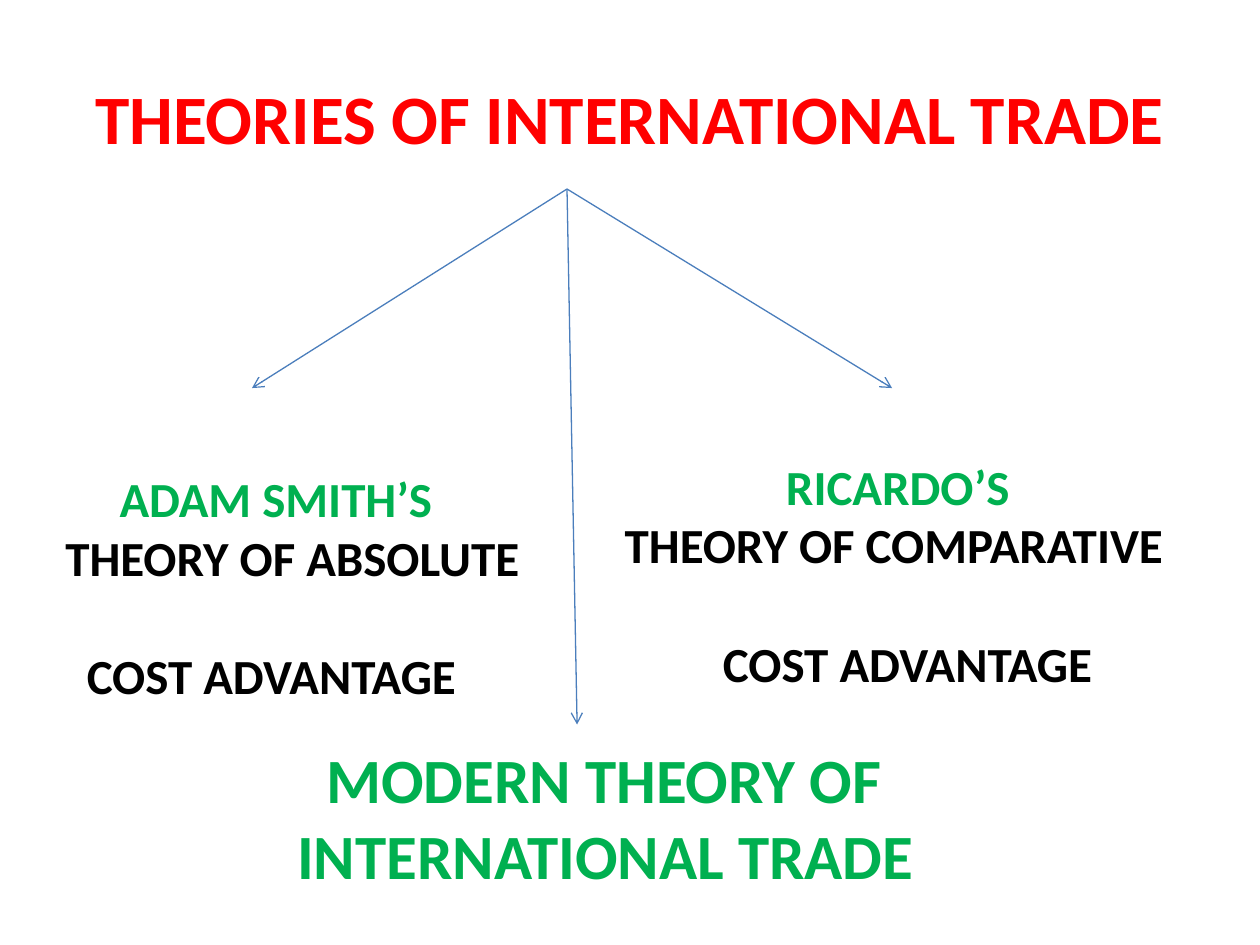
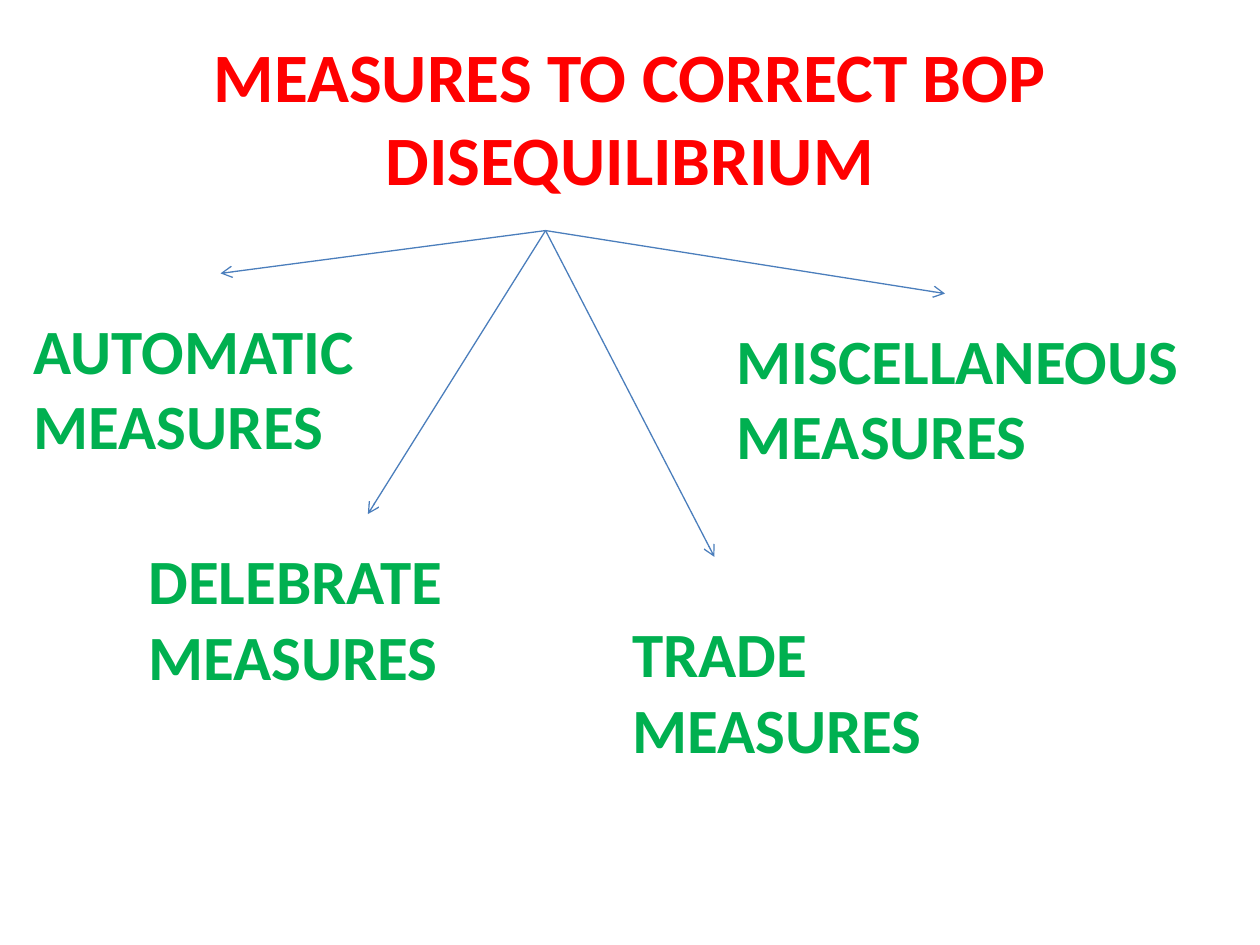
"""Build two slides: theories of international trade and measures to correct BOP disequilibrium."""
from pptx import Presentation
from pptx.dml.color import RGBColor
from pptx.enum.shapes import MSO_CONNECTOR
from pptx.enum.text import MSO_ANCHOR, MSO_AUTO_SIZE, PP_ALIGN
from pptx.oxml.ns import qn
from pptx.util import Inches, Pt
from lxml.etree import SubElement

RED = RGBColor(0xFF, 0x00, 0x00)
GREEN = RGBColor(0x00, 0xB0, 0x50)
BLACK = RGBColor(0x00, 0x00, 0x00)
BLUE = RGBColor(0x4B, 0x7E, 0xBC)
FONT = "Calibri"
TITLE_BOX = (0.5, 0.3, 9, 1.25)
COST_GAP = 34

# Each line of a label: text, colour, indent in inches, space before in points.
SLIDES = [
    {
        "title": "THEORIES OF INTERNATIONAL TRADE",
        "origin": (4.5, 1.5),
        "tips": [(2, 3.08), (7.08, 3.08), (4.58, 5.75)],
        "labels": [
            ((0.42, 3.67, 3.92, 1.51), 28, [
                ("ADAM SMITH’S", GREEN, 0.43, 0),
                ("THEORY OF ABSOLUTE", BLACK, 0, 0),
                ("COST ADVANTAGE", BLACK, 0.17, COST_GAP)]),
            ((4.33, 3.57, 5.67, 1.51), 28, [
                ("RICARDO’S", GREEN, 1.81, 0),
                ("THEORY OF COMPARATIVE", BLACK, 0.53, 0),
                ("COST ADVANTAGE", BLACK, 1.31, COST_GAP)]),
            ((1.92, 5.83, 6.67, 1.31), 36, [
                ("MODERN THEORY OF", GREEN, 0.57, 0),
                ("INTERNATIONAL TRADE", GREEN, 0.34, 0)]),
        ],
    },
    {
        "title": "MEASURES TO CORRECT BOP DISEQUILIBRIUM",
        "origin": (4.33, 1.83),
        "tips": [(1.75, 2.17), (7.5, 2.33), (2.92, 4.08), (5.67, 4.42)],
        "labels": [
            ((0.17, 2.42, 3.92, 1.31), 36, [("AUTOMATIC MEASURES", GREEN, 0, 0)]),
            ((1.08, 4.25, 4, 1.31), 36, [("DELEBRATE MEASURES", GREEN, 0, 0)]),
            ((4.92, 4.83, 2.83, 1.31), 36, [("TRADE MEASURES", GREEN, 0, 0)]),
            ((5.75, 2.5, 4.25, 1.31), 36, [("MISCELLANEOUS MEASURES", GREEN, 0, 0)]),
        ],
    },
]


def add_text(s, lines, box, size, align=PP_ALIGN.LEFT, anchor=MSO_ANCHOR.TOP,
             fit=MSO_AUTO_SIZE.SHAPE_TO_FIT_TEXT):
    tf = s.shapes.add_textbox(*map(Inches, box)).text_frame
    tf.word_wrap = True
    tf.auto_size = fit
    tf.vertical_anchor = anchor
    for i, (text, color, indent, before) in enumerate(lines):
        p = tf.add_paragraph() if i else tf.paragraphs[0]
        p.alignment = align
        p.space_before = Pt(before)
        p._p.get_or_add_pPr().set("marL", str(Inches(indent)))
        r = p.add_run()
        r.text = text
        r.font.name, r.font.size, r.font.bold = FONT, Pt(size), True
        r.font.color.rgb = color


def add_arrow(s, start, end):
    c = s.shapes.add_connector(MSO_CONNECTOR.STRAIGHT, *map(Inches, start + end))
    c.line.color.rgb = BLUE
    c.line.width = Pt(0.75)
    SubElement(c.line._get_or_add_ln(), qn("a:tailEnd"), type="arrow")
    SubElement(c._element.spPr, qn("a:effectLst"))


def main():
    prs = Presentation()
    prs.slide_width, prs.slide_height = Inches(10), Inches(7.5)
    for content in SLIDES:
        s = prs.slides.add_slide(prs.slide_layouts[6])
        add_text(s, [(content["title"], RED, 0, 0)], TITLE_BOX, 39.6,
                 align=PP_ALIGN.CENTER, anchor=MSO_ANCHOR.MIDDLE, fit=MSO_AUTO_SIZE.NONE)
        for tip in content["tips"]:
            add_arrow(s, content["origin"], tip)
        for box, size, lines in content["labels"]:
            add_text(s, lines, box, size)
    prs.save("out.pptx")


if __name__ == "__main__":
    main()
